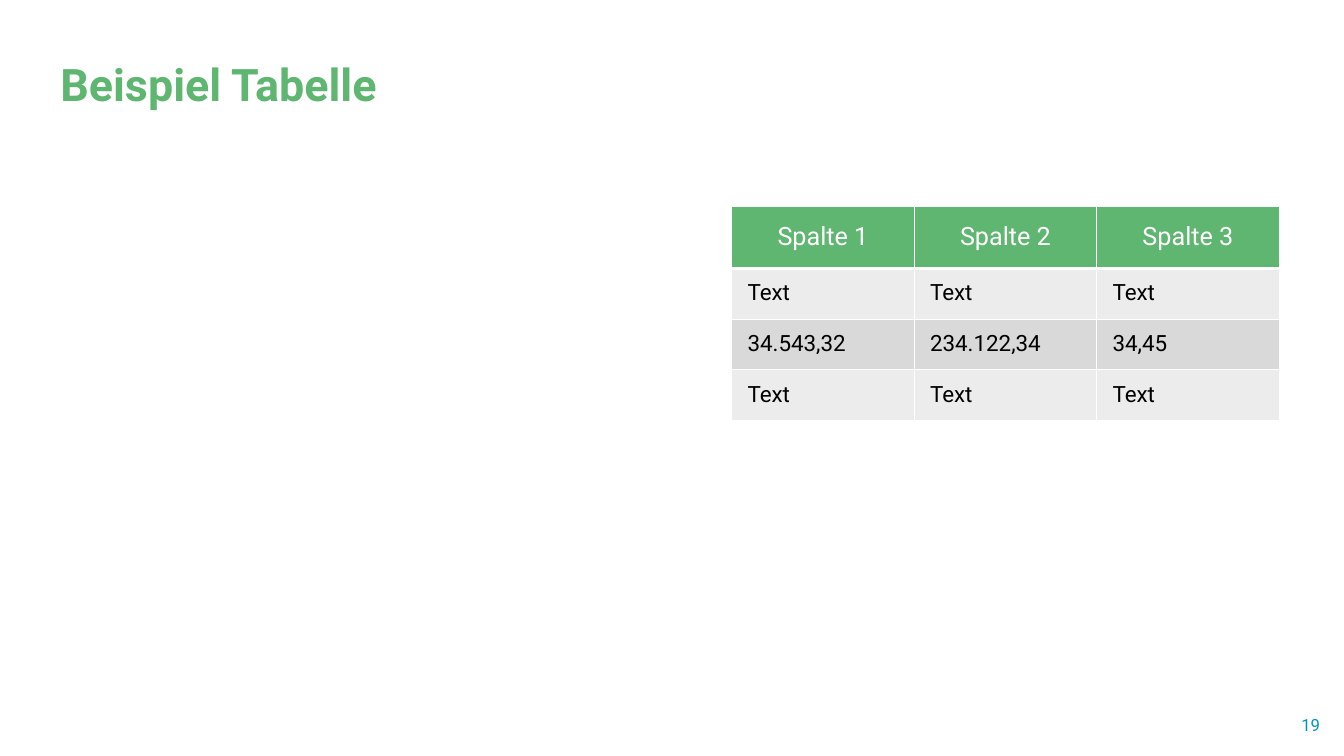
from lxml.etree import SubElement
from pptx import Presentation
from pptx.dml.color import RGBColor
from pptx.enum.text import MSO_ANCHOR, MSO_AUTO_SIZE, PP_ALIGN
from pptx.oxml.ns import qn
from pptx.util import Cm, Pt


def write(frame, text, size, color, bold=False, align=PP_ALIGN.LEFT):
    para = frame.paragraphs[0]
    para.alignment = align
    span = para.add_run()
    span.text = text
    for name, value in {"name": "Roboto", "size": Pt(size), "bold": bold}.items():
        setattr(span.font, name, value)
    span.font.color.rgb = RGBColor.from_string(color)
    return para


def border(cell, widths):
    properties = cell._tc.get_or_add_tcPr()
    for index, (side, width) in enumerate(widths.items()):
        line = SubElement(properties, qn(f"a:ln{side}"), w=str(Pt(width)))
        fill = SubElement(line, qn("a:solidFill"))
        SubElement(fill, qn("a:srgbClr"), val="FFFFFF")
        properties.insert(index, line)


deck = Presentation()
deck.slide_width, deck.slide_height = Cm(33.87), Cm(19.05)
page = deck.slides.add_slide(deck.slide_layouts[5])

title = page.shapes.title
number = page.shapes.add_textbox(Cm(32), Cm(18), Cm(1.27), Cm(0.51))
title.left, title.top, title.width, title.height = Cm(1.52), Cm(1.6), Cm(26.6), Cm(1.2)
for box, anchor in ((title, MSO_ANCHOR.BOTTOM), (number, MSO_ANCHOR.MIDDLE)):
    frame_format = {
        "margin_left": 0, "margin_top": 0, "margin_right": 0, "margin_bottom": 0,
        "word_wrap": True, "auto_size": MSO_AUTO_SIZE.SHAPE_TO_FIT_TEXT,
        "vertical_anchor": anchor,
    }
    for name, value in frame_format.items():
        setattr(box.text_frame, name, value)

heading = write(title.text_frame, "Beispiel Tabelle", 32, "5FB670", bold=True)
heading.line_spacing = 0.85
write(number.text_frame, "19", 12, "0093BE", align=PP_ALIGN.RIGHT)

rows = [
    ["Spalte 1", "Spalte 2", "Spalte 3"],
    ["Text", "Text", "Text"],
    ["34.543,32", "234.122,34", "34,45"],
    ["Text", "Text", "Text"],
]
row_fills = ["5FB670", "ECECEC", "D9D9D9", "ECECEC"]
header_format = {
    "margin_left": 0, "margin_top": Cm(0.4), "margin_right": 0, "margin_bottom": Cm(0.4),
    "vertical_anchor": MSO_ANCHOR.MIDDLE,
}
body_format = {
    "margin_left": Cm(0.4), "margin_top": Cm(0.3), "margin_right": Cm(0.25),
    "margin_bottom": Cm(0.3), "vertical_anchor": MSO_ANCHOR.TOP,
}

table = page.shapes.add_table(
    len(rows), 3, Cm(18.44), Cm(5.2), Cm(13.8), Cm(5.3)
).table
for column in table.columns:
    column.width = Cm(4.6)
for row_index, (texts, fill) in enumerate(zip(rows, row_fills)):
    is_header = row_index == 0
    table.rows[row_index].height = Cm(1.55 if is_header else 1.25)
    for column_index, text in enumerate(texts):
        cell = table.cell(row_index, column_index)
        for name, value in (header_format if is_header else body_format).items():
            setattr(cell, name, value)
        cell.fill.solid()
        cell.fill.fore_color.rgb = RGBColor.from_string(fill)
        border(cell, {"L": 1, "R": 1, "T": 1, "B": 3 if is_header else 1})
        if is_header:
            write(cell.text_frame, text, 18, "FFFFFF", align=PP_ALIGN.CENTER)
        else:
            write(cell.text_frame, text, 16, "000000")

deck.save("out.pptx")
